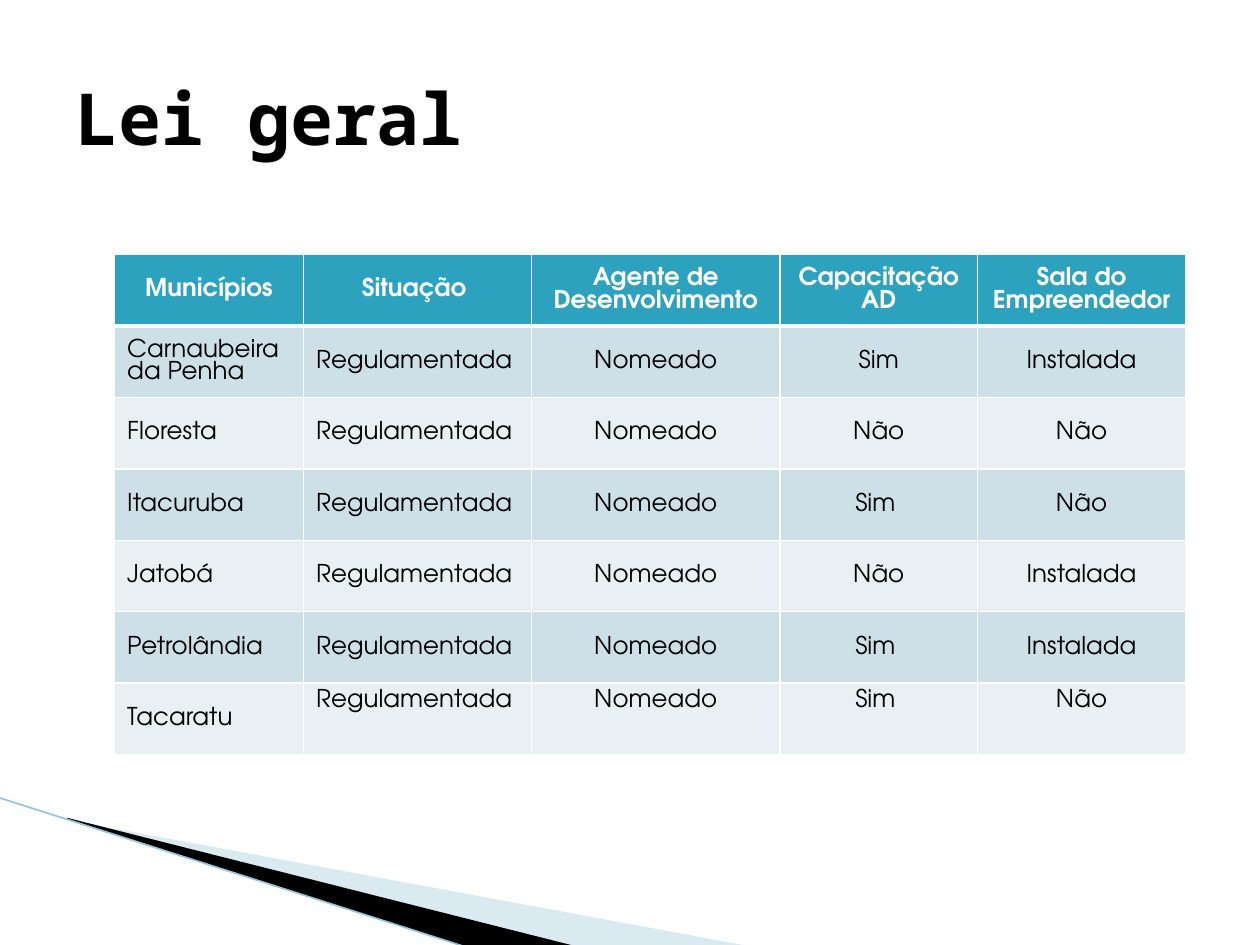
from dataclasses import dataclass

from lxml import etree
from pptx import Presentation
from pptx import util as u
from pptx.dml.color import RGBColor
from pptx.enum import shapes, text
from pptx.oxml import ns


@dataclass(frozen=True)
class Theme:
    title_font: str = "Noto Sans Mono"
    table_font: str = "TeX Gyre Adventor"
    title_size: float = 41
    table_size: float = 14
    ink: str = "000000"
    paper: str = "FFFFFF"
    header: str = "2DA2BF"
    bands: tuple = ("CDE0E8", "E8F0F4")
    wedge: str = "A0CBDC"
    edge: str = "97C5D8"
    thin_border: float = 1
    header_border: float = 3


@dataclass(frozen=True)
class Wedge:
    points: tuple
    color: str
    opacity: int = 100


@dataclass(frozen=True)
class Column:
    heading: str
    width: float
    align: text.PP_ALIGN = text.PP_ALIGN.CENTER


THEME = Theme()
LEFT = text.PP_ALIGN.LEFT
CENTER = text.PP_ALIGN.CENTER

WEDGES = (
    Wedge(((0.55, 6.51), (5.95, 7.51), (4.56, 7.51), (0.55, 6.5)), THEME.wedge, 40),
    Wedge(((0.53, 6.49), (4.57, 7.51), (3.72, 7.52), (0.54, 6.5)), THEME.ink),
)
COLUMNS = (
    Column("Municípios", 1.5, LEFT),
    Column("Situação ", 1.81, LEFT),
    Column("Agente de Desenvolvimento", 1.97),
    Column("Capacitação\nAD", 1.57),
    Column("Sala do Empreendedor", 1.65),
)
# Town, training, entrepreneur's room; the other two columns are constant
TOWNS = (
    ("Carnaubeira da Penha", "Sim", "Instalada"),
    ("Floresta", "Não", "Não"),
    ("Itacuruba", "Sim ", "Não"),
    ("Jatobá", "Não", "Instalada"),
    ("Petrolândia", "Sim ", "Instalada"),
    ("Tacaratu", "Sim ", "Não"),
)


def rgb(color: str) -> RGBColor:
    return RGBColor.from_string(color)


def draw_wedge(slide, wedge: Wedge) -> None:
    start, *rest = [(u.Inches(x), u.Inches(y)) for x, y in wedge.points]
    builder = slide.shapes.build_freeform(*start)
    builder.add_line_segments(rest, close=True)
    shape = builder.convert_to_shape()
    shape.shadow.inherit = False
    shape.fill.solid()
    shape.fill.fore_color.rgb = rgb(wedge.color)
    shape.line.fill.background()
    if wedge.opacity < 100:
        color = shape.fill._xPr.find(".//" + ns.qn("a:srgbClr"))
        etree.SubElement(color, ns.qn("a:alpha"), val=str(wedge.opacity * 1000))


def draw_edge(slide) -> None:
    edge = slide.shapes.add_connector(
        shapes.MSO_CONNECTOR.STRAIGHT,
        u.Inches(-0.01), u.Inches(6.33), u.Inches(3.71), u.Inches(7.52))
    edge.line.color.rgb = rgb(THEME.edge)
    edge.line.width = u.Pt(0.95)
    etree.SubElement(edge._element.spPr, ns.qn("a:effectLst"))


def set_borders(cell, top: float, bottom: float) -> None:
    """Border lines must come before the fill in the cell properties."""
    thin = THEME.thin_border
    sides = (("lnL", thin), ("lnR", thin), ("lnT", top), ("lnB", bottom))
    for position, (side, points) in enumerate(sides):
        line = etree.Element(ns.qn(f"a:{side}"), w=str(u.Pt(points)))
        fill = etree.SubElement(line, ns.qn("a:solidFill"))
        etree.SubElement(fill, ns.qn("a:srgbClr"), val=THEME.paper)
        cell._tc.get_or_add_tcPr().insert(position, line)


def fill_cell(cell, words: str, align: text.PP_ALIGN, fill: str,
              color: str, bold: bool, anchor: text.MSO_ANCHOR) -> None:
    cell.text = words
    cell.vertical_anchor = anchor
    cell.fill.solid()
    cell.fill.fore_color.rgb = rgb(fill)
    for paragraph in cell.text_frame.paragraphs:
        paragraph.alignment = align
        paragraph.font.name = THEME.table_font
        paragraph.font.size = u.Pt(THEME.table_size)
        paragraph.font.bold = bold
        paragraph.font.color.rgb = rgb(color)


def draw_table(slide) -> None:
    table = slide.shapes.add_table(
        len(TOWNS) + 1, len(COLUMNS),
        u.Inches(0.91), u.Inches(2.02), u.Inches(8.5), u.Inches(3.97)).table
    thin, thick = THEME.thin_border, THEME.header_border
    middle, top = text.MSO_ANCHOR.MIDDLE, text.MSO_ANCHOR.TOP

    # Header row
    for c, column in enumerate(COLUMNS):
        table.columns[c].width = u.Inches(column.width)
        cell = table.cell(0, c)
        fill_cell(cell, column.heading, CENTER, THEME.header, THEME.paper, True, middle)
        set_borders(cell, thin, thick)

    # Banded body; the last row's statuses sit at the top
    for r, (town, training, room) in enumerate(TOWNS, start=1):
        values = (town, "Regulamentada", "Nomeado", training, room)
        for c, (column, value) in enumerate(zip(COLUMNS, values)):
            cell = table.cell(r, c)
            anchor = top if r == len(TOWNS) and c > 0 else middle
            fill_cell(cell, value, column.align, THEME.bands[(r - 1) % 2],
                      THEME.ink, False, anchor)
            set_borders(cell, thick if r == 1 else thin, thin)


def draw_title(slide) -> None:
    title = slide.shapes.title
    title.left, title.top = u.Inches(0.5), u.Inches(0.3)
    title.width, title.height = u.Inches(9), u.Inches(1.25)
    title.text_frame.text = "Lei geral"
    title.text_frame.vertical_anchor = text.MSO_ANCHOR.MIDDLE
    heading = title.text_frame.paragraphs[0]
    heading.alignment = LEFT
    heading.font.name = THEME.title_font
    heading.font.size = u.Pt(THEME.title_size)
    heading.font.bold = True
    heading.font.color.rgb = rgb(THEME.ink)


def main() -> None:
    deck = Presentation()
    deck.slide_width, deck.slide_height = u.Inches(10), u.Inches(7.5)
    slide = deck.slides.add_slide(deck.slide_layouts.get_by_name("Title Only"))

    # Corner decoration
    for wedge in WEDGES:
        draw_wedge(slide, wedge)
    draw_edge(slide)

    # Content
    draw_title(slide)
    draw_table(slide)
    deck.save("out.pptx")


if __name__ == "__main__":
    main()
